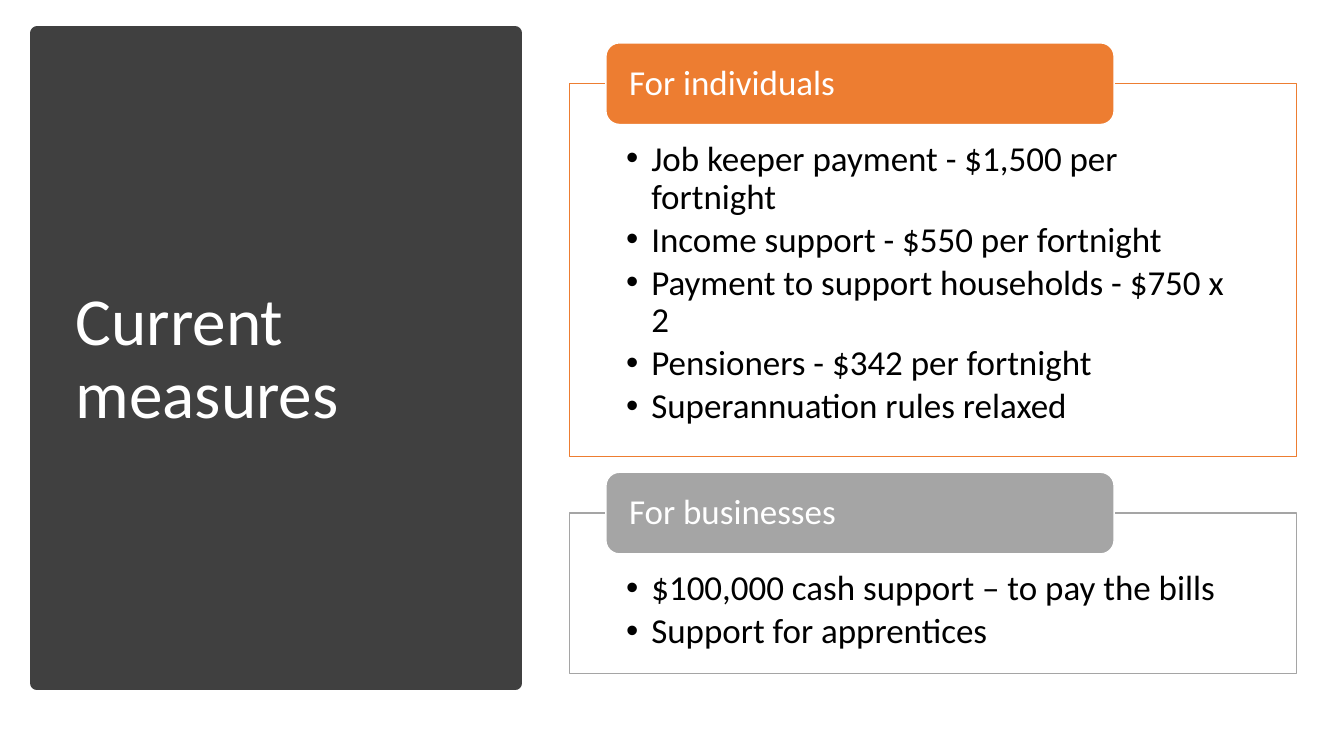
from lxml import etree
from pptx import Presentation
from pptx.dml.color import RGBColor
from pptx.enum.shapes import MSO_SHAPE
from pptx.enum.text import MSO_ANCHOR, MSO_AUTO_SIZE, PP_ALIGN
from pptx.oxml.ns import qn
from pptx.util import Pt

RECT, ROUND = MSO_SHAPE.RECTANGLE, MSO_SHAPE.ROUNDED_RECTANGLE
TOP, MIDDLE = MSO_ANCHOR.TOP, MSO_ANCHOR.MIDDLE
LEFT, FIXED = PP_ALIGN.LEFT, MSO_AUTO_SIZE.NONE

# Content
TITLE = "Current measures"
GROUPS = [
    ("For individuals", "ED7D31", 370, [
        "Job keeper payment - $1,500 per fortnight",
        "Income support - $550 per fortnight",
        "Payment to support households - $750 x 2",
        "Pensioners - $342 per fortnight",
        "Superannuation rules relaxed",
    ]),
    ("For businesses", "A5A5A5", 159, [
        "$100,000 cash support – to pay the bills",
        "Support for apprentices",
    ]),
]

# Layout, 100 px to the inch
PX = 9144
FONT, DARK, WHITE, BLACK = "Calibri", "404040", "FFFFFF", "000000"
BOX_X, BOX_W, BOX_TOP, GAP = 565, 721, 83, 56
TAB_X, TAB_W, TAB_H = 601, 504, 81


def px(n):
    return int(n * PX)


def color(code):
    return RGBColor.from_string(code)


def place(item, x, y, w, h):
    item.left, item.top, item.width, item.height = px(x), px(y), px(w), px(h)


def paint(item, fill, line, width):
    item.fill.solid()
    item.fill.fore_color.rgb = color(fill)
    item.line.color.rgb = color(line)
    item.line.width = Pt(width)


def block(kind, x, y, w, h, fill, line, width):
    item = slide.shapes.add_shape(kind, px(x), px(y), px(w), px(h))
    item.shadow.inherit = False
    paint(item, fill, line, width)
    return item


def write(item, text, size, ink, anchor, pads, after=0):
    frame = item.text_frame
    frame.text = text
    frame.word_wrap, frame.auto_size = True, FIXED
    frame.vertical_anchor = anchor
    (frame.margin_left, frame.margin_top,
     frame.margin_right, frame.margin_bottom) = map(px, pads)
    for para in frame.paragraphs:
        para.alignment, para.line_spacing = LEFT, 0.9
        para.space_before, para.space_after = Pt(0), Pt(after)
        for run in para.runs:
            run.font.name, run.font.size = FONT, Pt(size)
            run.font.color.rgb = color(ink)


def bullet(para):
    props = para._p.get_or_add_pPr()
    props.set("marL", str(px(25)))
    props.set("indent", str(px(-25)))
    etree.SubElement(props, qn("a:buFont")).set("typeface", "Arial")
    etree.SubElement(props, qn("a:buChar")).set("char", "•")


deck = Presentation()
deck.slide_width, deck.slide_height = px(1333), px(750)
slide = deck.slides.add_slide(deck.slide_layouts[3])
title, *lists = slide.placeholders

# Dark panel, sent behind the title
panel = block(RECT, 37, 33, 474, 645, DARK, DARK, 10)
slide.shapes._spTree.insert(2, panel._element)
place(title, 65, 70, 416, 575)
write(title, TITLE, 48, WHITE, MIDDLE, (10, 5, 10, 5))

# Framed lists, each with a tab centred on its top edge
y = BOX_TOP
for body, (head, tone, high, items) in zip(lists, GROUPS):
    place(body, BOX_X, y, BOX_W, high)
    paint(body, WHITE, tone, 1)
    write(body, "\n".join(items), 25, BLACK, TOP, (56, 57, 56, 19), 3.75)
    for para in body.text_frame.paragraphs:
        bullet(para)
    tab = block(ROUND, TAB_X, y - TAB_H / 2, TAB_W, TAB_H, tone, WHITE, 1)
    write(tab, head, 25, WHITE, MIDDLE, (19, 0, 19, 0))
    y += high + GAP

deck.save("out.pptx")
